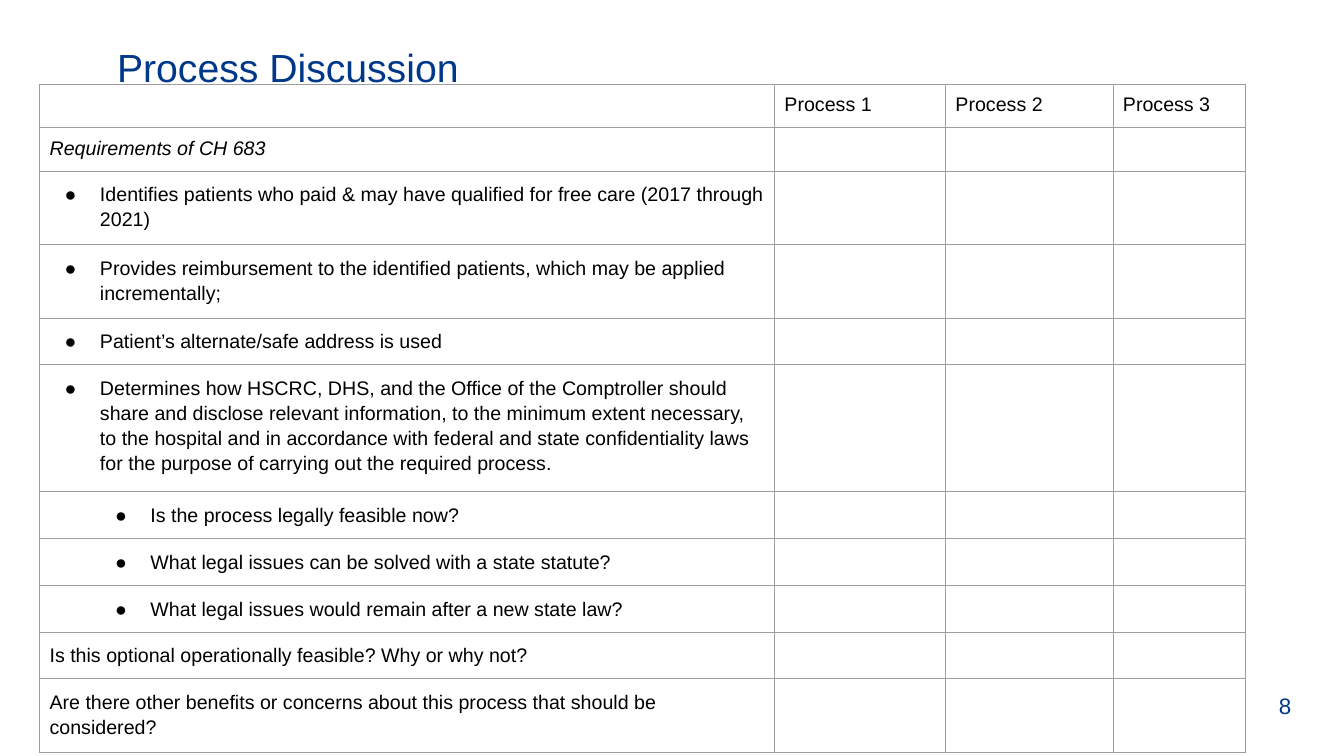
from lxml import etree
from pptx import Presentation, util as u
from pptx.dml.color import RGBColor
from pptx.enum import text
from pptx.oxml import ns

COLORS = {"navy": "003889", "ink": "000000", "rule": "9E9E9E"}
MARGIN = u.Cm(0.25)


def add_xml(parent, tag, **attributes):
    return etree.SubElement(parent, ns.qn(tag), attributes)


def write(para, words, color, **formats):
    span = para.add_run()
    span.text = words
    span.font.color.rgb = RGBColor.from_string(COLORS[color])
    for name, value in {"name": "Arial", **formats}.items():
        setattr(span.font, name, value)


deck = Presentation()
deck.slide_width, deck.slide_height = u.Cm(33.87), u.Cm(19.05)
page = deck.slides.add_slide(deck.slide_layouts[6])

# Title and page number
labels = [
    ("Process Discussion", 28, (2.7, 0.97, 29.21, 1.68), text.MSO_ANCHOR.TOP),
    ("8", 16, (31.98, 17.27, 1.6, 1.02), text.MSO_ANCHOR.MIDDLE),
]
for words, size, place, anchor in labels:
    box = page.shapes.add_textbox(*map(u.Cm, place))
    box.text_frame.word_wrap = True
    box.text_frame.vertical_anchor = anchor
    write(box.text_frame.paragraphs[0], words, "navy", size=u.Pt(size))

# Criteria: wording, kind, row height in cm
criteria = [
    ("Requirements of CH 683", "heading", 1.07),
    ("Identifies patients who paid & may have qualified for free care "
     "(2017 through 2021)", "bullet", 1.79),
    ("Provides reimbursement to the identified patients, which may be "
     "applied incrementally;", "bullet", 1.79),
    ("Patient’s alternate/safe address is used", "bullet", 1.14),
    ("Determines how HSCRC, DHS, and the Office of the Comptroller should "
     "share and disclose relevant information, to the minimum extent "
     "necessary, to the hospital and in accordance with federal and state "
     "confidentiality laws for the purpose of carrying out the required "
     "process.", "bullet", 3.06),
    ("Is the process legally feasible now?", "sub-bullet", 1.14),
    ("What legal issues can be solved with a state statute?", "sub-bullet", 1.14),
    ("What legal issues would remain after a new state law?", "sub-bullet", 1.14),
    ("Is this optional operationally feasible? Why or why not?", "question", 1.14),
    ("Are there other benefits or concerns about this process that should "
     "be considered?", "question", 1.79),
]
indents = {"bullet": u.Cm(1.27), "sub-bullet": u.Cm(2.54)}
column_widths = [18.52, 4.31, 4.22, 3.35]
row_heights = [1.09] + [height for _, _, height in criteria]

# Comparison table
frame = page.shapes.add_table(
    len(row_heights), len(column_widths), u.Cm(1), u.Cm(2.12),
    u.Cm(sum(column_widths)), u.Cm(sum(row_heights)))
table = frame.table
table.first_row = table.horz_banding = False
for column, width in zip(table.columns, column_widths):
    column.width = u.Cm(width)
for row, height in zip(table.rows, row_heights):
    row.height = u.Cm(height)

# Cell borders and fill
for cell in table.iter_cells():
    properties = cell._tc.get_or_add_tcPr()
    for side in ("a:lnL", "a:lnR", "a:lnT", "a:lnB"):
        line = add_xml(properties, side, w=str(u.Pt(0.75)))
        add_xml(add_xml(line, "a:solidFill"), "a:srgbClr", val=COLORS["rule"])
    cell.fill.background()

# Cell text
entries = [(0, number, f"Process {number}", "header") for number in (1, 2, 3)]
entries += [(row, 0, words, kind)
            for row, (words, kind, _) in enumerate(criteria, 1)]
for row, column, words, kind in entries:
    cell = table.cell(row, column)
    for side in ("left", "right", "top", "bottom"):
        setattr(cell, f"margin_{side}", MARGIN)
    para = cell.text_frame.paragraphs[0]
    if kind in indents:
        layout = para._p.get_or_add_pPr()
        layout.set("marL", str(indents[kind]))
        layout.set("indent", str(-u.Cm(0.89)))
        add_xml(add_xml(layout, "a:buClr"), "a:srgbClr", val=COLORS["ink"])
        add_xml(layout, "a:buFont", typeface="Arial")
        add_xml(layout, "a:buChar", char="●")
    if kind not in ("header", "heading"):
        para.line_spacing = 1.14
    write(para, words, "ink", size=u.Pt(14), italic=kind == "heading")

deck.save("out.pptx")
